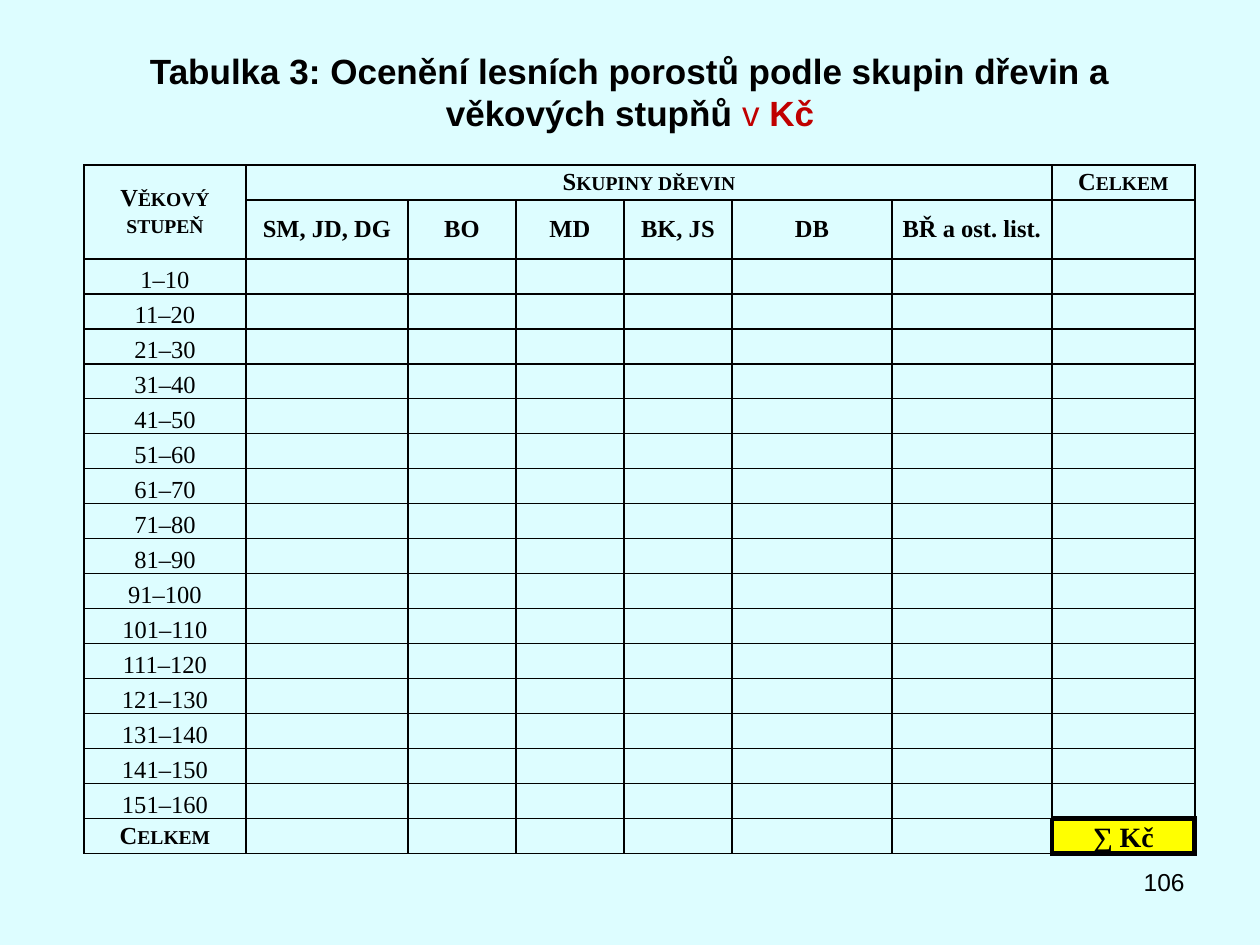
from lxml import etree
from pptx import Presentation
from pptx import util as u
from pptx.dml.color import RGBColor
from pptx.enum import text
from pptx.oxml.ns import qn

PX = 914400 // 126
BLACK, RED, YELLOW, PALE = "000000", "C00000", "FFFF00", "DDFDFF"
CENTER, RIGHT = text.PP_ALIGN.CENTER, text.PP_ALIGN.RIGHT
MIDDLE, BOTTOM, TOP = (text.MSO_ANCHOR.MIDDLE, text.MSO_ANCHOR.BOTTOM,
                       text.MSO_ANCHOR.TOP)

COLUMNS = [162, 162, 108, 108, 108, 160, 160, 143]
ROW, HEADER_ROW = 35, 56
SPECIES = ["SM, JD, DG", "BO", "MD", "BK, JS", "DB", "BŘ a ost. list."]
AGES = [f"{start}–{start + 9}" for start in range(1, 160, 10)]


def rgb(value):
    return RGBColor.from_string(value)


def add_run(p, words, font="Times New Roman", size=14, color=BLACK,
            bold=False, small_caps=False):
    r = p.add_run()
    r.text = words
    r.font.name, r.font.size, r.font.bold = font, u.Pt(size), bold
    r.font.color.rgb = rgb(color)
    if small_caps:
        r.font._element.set("cap", "small")


def set_border(cell, sides, width):
    """Draw black lines on the given sides, in L, R, T, B order."""
    tc_pr = cell._tc.get_or_add_tcPr()
    for index, side in enumerate("LRTB"):
        if side not in sides:
            continue
        old = tc_pr.find(qn(f"a:ln{side}"))
        if old is not None:
            tc_pr.remove(old)
        ln = etree.Element(qn(f"a:ln{side}"), w=str(u.Pt(width)))
        fill = etree.SubElement(ln, qn("a:solidFill"))
        etree.SubElement(fill, qn("a:srgbClr"), val=BLACK)
        tc_pr.insert(index, ln)


class SlideBuilder:
    def __init__(self, width, height, background):
        self.prs = Presentation()
        self.prs.slide_width, self.prs.slide_height = width * PX, height * PX
        self.s = self.prs.slides.add_slide(self.prs.slide_layouts[6])
        self.s.background.fill.solid()
        self.s.background.fill.fore_color.rgb = rgb(background)

    def text_box(self, x, y, w, h, runs, align, anchor=TOP):
        """Add one paragraph made of (words, format) pairs."""
        sp = self.s.shapes.add_textbox(x * PX, y * PX, w * PX, h * PX)
        tf = sp.text_frame
        tf.word_wrap, tf.vertical_anchor = True, anchor
        p = tf.paragraphs[0]
        p.alignment = align
        for words, style in runs:
            add_run(p, words, font="Arial", **style)

    def table(self, x, y, columns, rows):
        """Add an empty table with thin black lines and no fill."""
        frame = self.s.shapes.add_table(len(rows), len(columns), x * PX, y * PX,
                                        sum(columns) * PX, sum(rows) * PX)
        table = frame.table
        table.first_row = table.horz_banding = False
        for column, width in zip(table.columns, columns):
            column.width = width * PX
        for row, height in zip(table.rows, rows):
            row.height = height * PX
        for cell in table.iter_cells():
            cell.margin_left = cell.margin_right = 6 * PX
            cell.margin_top = cell.margin_bottom = 0
            cell.fill.background()
            set_border(cell, "LRTB", 1)
            end = cell.text_frame.paragraphs[0]._p
            etree.SubElement(end, qn("a:endParaRPr"), sz="1400")
        return table

    def cell_text(self, cell, words, anchor=MIDDLE, **style):
        cell.vertical_anchor = anchor
        p = cell.text_frame.paragraphs[0]
        p.alignment = CENTER
        add_run(p, words, **style)


def main():
    slide = SlideBuilder(1260, 945, PALE)
    slide.text_box(63, 38, 1134, 107, [
        ("Tabulka 3: Ocenění lesních porostů podle skupin dřevin a věkových stupňů ",
         dict(size=20, bold=True)),
        ("v", dict(size=20, color=RED)),
        (" Kč", dict(size=20, color=RED, bold=True)),
    ], CENTER, MIDDLE)
    slide.text_box(903, 861, 294, 65, [("106", {})], RIGHT)

    rows = [ROW, HEADER_ROW] + [ROW] * (len(AGES) + 1)
    table = slide.table(84, 165, COLUMNS, rows)
    last_row, last_col = len(rows) - 1, len(COLUMNS) - 1
    table.cell(0, 0).merge(table.cell(1, 0))
    table.cell(0, 1).merge(table.cell(0, len(SPECIES)))

    headings = [(0, 0, "Věkový stupeň"), (0, 1, "Skupiny dřevin"),
                (0, last_col, "Celkem"), (last_row, 0, "Celkem")]
    for row, col, words in headings:
        slide.cell_text(table.cell(row, col), words, bold=True, small_caps=True)
    for col, words in enumerate(SPECIES, 1):
        slide.cell_text(table.cell(1, col), words, bold=True)
    for row, words in enumerate(AGES, 2):
        slide.cell_text(table.cell(row, 0), words, BOTTOM)

    total = table.cell(last_row, last_col)
    slide.cell_text(total, "∑ Kč", BOTTOM, size=16, bold=True)
    total.fill.solid()
    total.fill.fore_color.rgb = rgb(YELLOW)
    set_border(total, "LRTB", 3)
    set_border(table.cell(last_row - 1, last_col), "B", 3)
    set_border(table.cell(last_row, last_col - 1), "R", 3)

    slide.prs.save("out.pptx")


if __name__ == "__main__":
    main()
